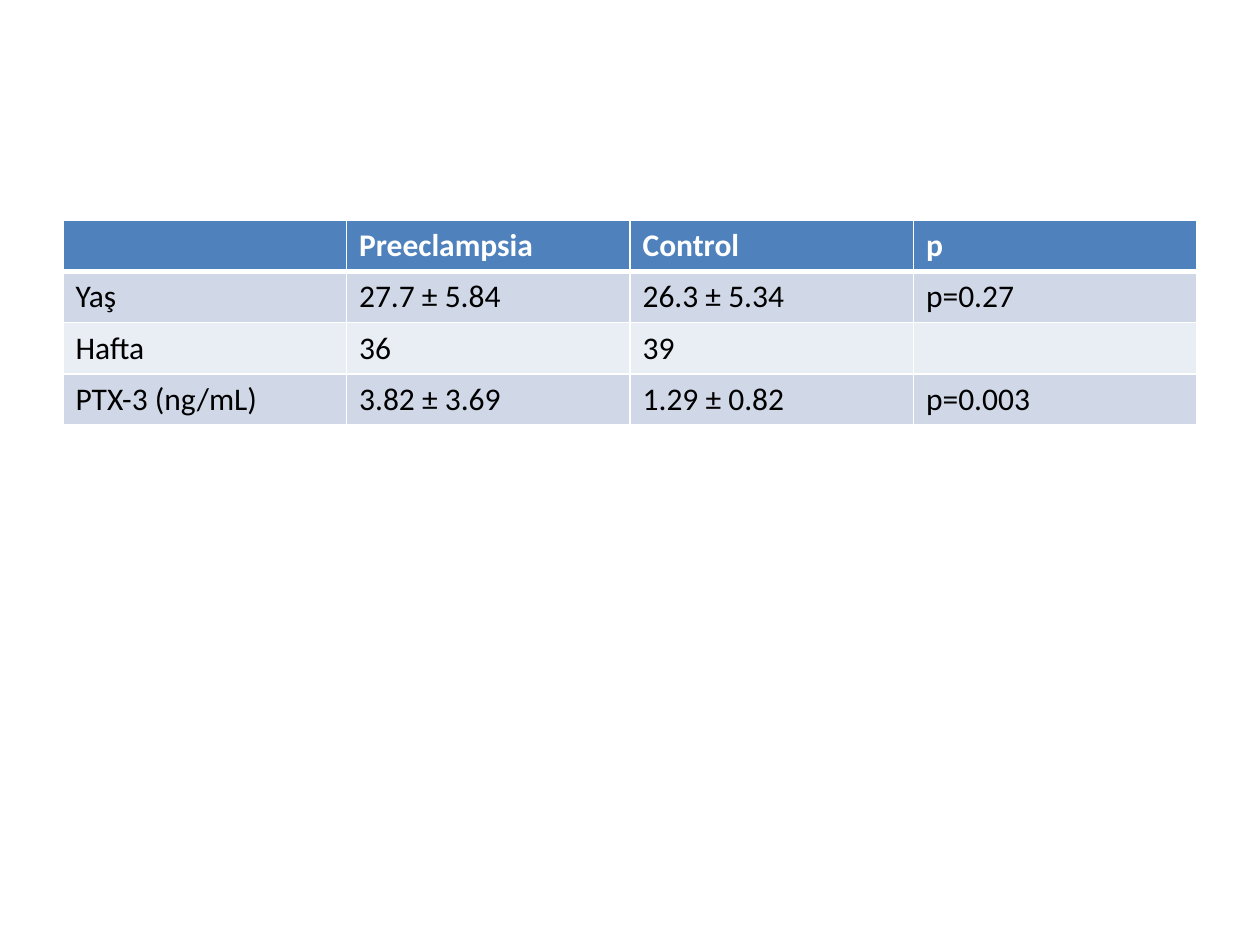
from lxml import etree
from pptx import Presentation
from pptx.dml.color import RGBColor
from pptx.oxml import ns
from pptx.util import Pt

FONT = "Calibri"
WHITE = RGBColor(0xFF, 0xFF, 0xFF)
BLACK = RGBColor(0x00, 0x00, 0x00)
HEADER_BLUE = RGBColor(0x4F, 0x81, 0xBD)
BAND_DARK = RGBColor(0xD0, 0xD8, 0xE8)
BAND_LIGHT = RGBColor(0xE9, 0xED, 0xF4)

RESULTS = [
    ["", "Preeclampsia", "Control", "p"],
    ["Yaş", "27.7 ± 5.84", "26.3 ± 5.34", "p=0.27"],
    ["Hafta", "36", "39", ""],
    ["PTX-3 (ng/mL)", "3.82 ± 3.69", "1.29 ± 0.82", "p=0.003"],
]


def set_borders(cell, widths, color):
    properties = cell._tc.get_or_add_tcPr()
    for side, width in widths.items():
        line = etree.SubElement(properties, ns.qn(f"a:ln{side}"), w=str(Pt(width)))
        fill = etree.SubElement(line, ns.qn("a:solidFill"))
        etree.SubElement(fill, ns.qn("a:srgbClr"), val=str(color))


def fill_cell(cell, content, row_index):
    is_header = row_index == 0
    top = 3 if row_index == 1 else 1
    bottom = 3 if is_header else 1
    set_borders(cell, {"L": 1, "R": 1, "T": top, "B": bottom}, WHITE)
    cell.fill.solid()
    band = BAND_DARK if row_index % 2 else BAND_LIGHT
    cell.fill.fore_color.rgb = HEADER_BLUE if is_header else band
    if content:
        run = cell.text_frame.paragraphs[0].add_run()
        run.text = content
        run.font.name = FONT
        run.font.size = Pt(18)
        run.font.bold = is_header
        run.font.color.rgb = WHITE if is_header else BLACK


def add_results_table(slide, left, top, width, height):
    table = slide.shapes.add_table(
        len(RESULTS), len(RESULTS[0]), left, top, width, height
    ).table
    for row_index, row in enumerate(RESULTS):
        for column_index, content in enumerate(row):
            fill_cell(table.cell(row_index, column_index), content, row_index)


def main():
    presentation = Presentation()
    presentation.slide_width = Pt(720)
    presentation.slide_height = Pt(540)
    slide = presentation.slides.add_slide(presentation.slide_layouts[6])
    add_results_table(slide, Pt(36), Pt(126), Pt(648), Pt(116.8))
    presentation.save("out.pptx")


if __name__ == "__main__":
    main()
